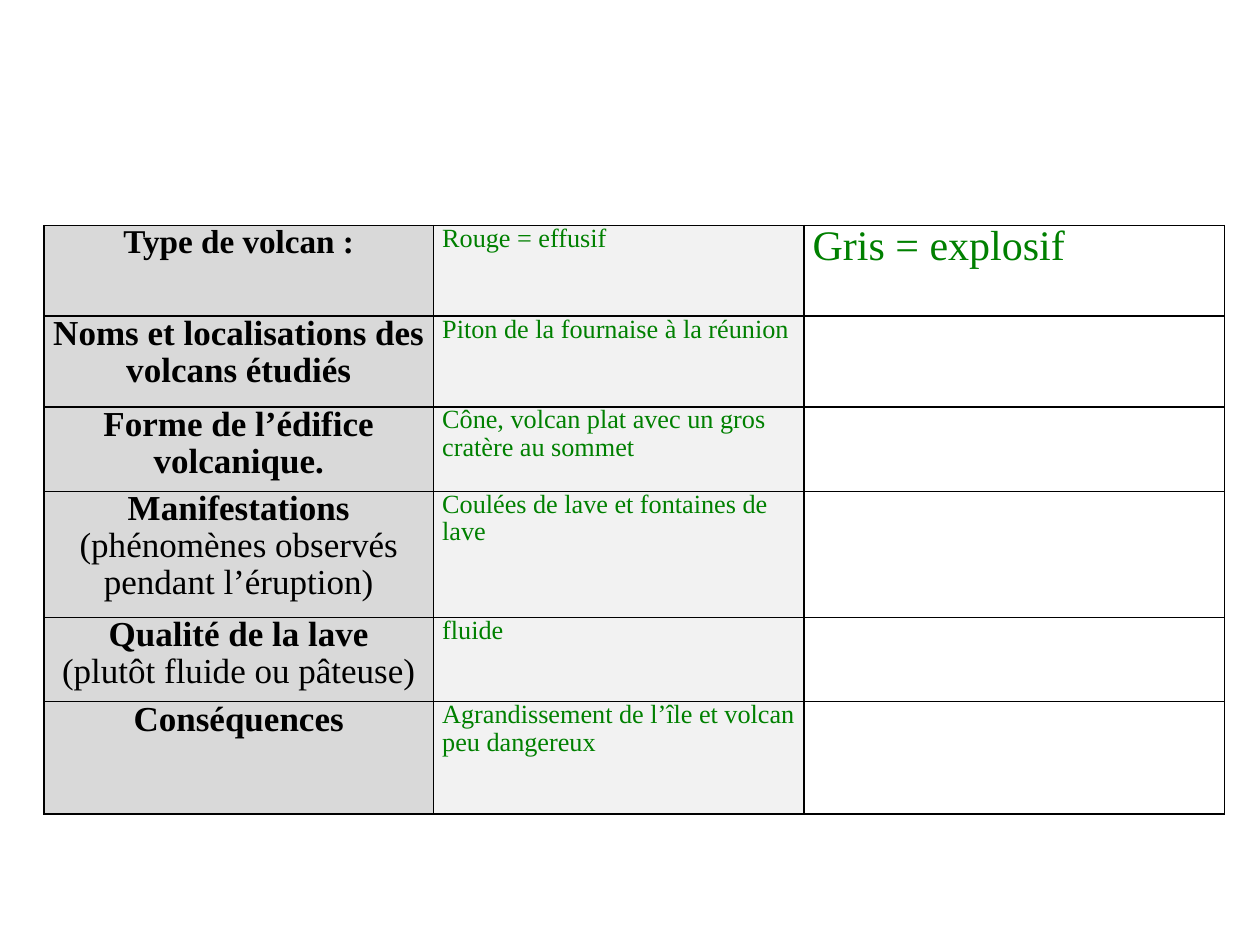
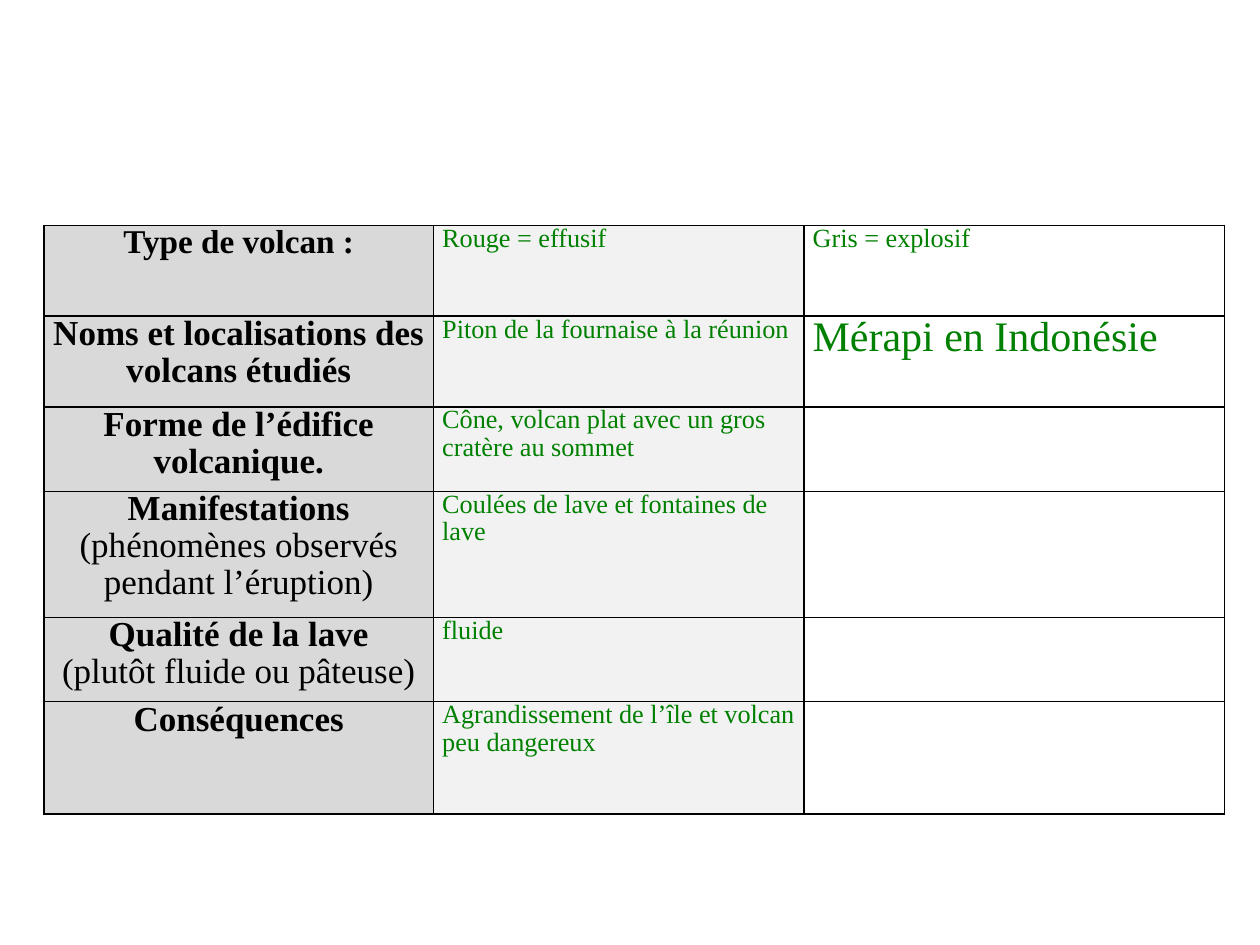
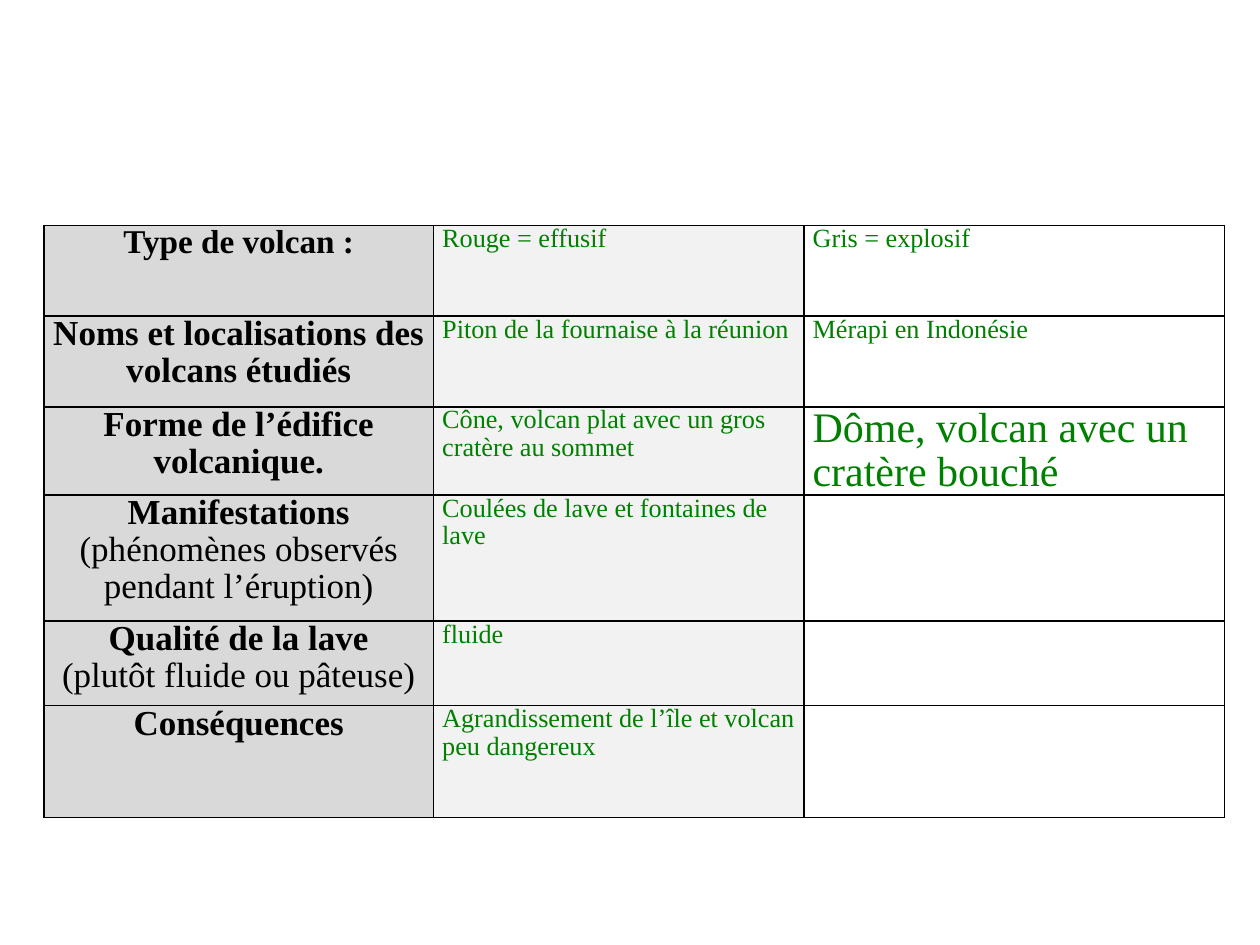
from lxml.etree import SubElement
from pptx import Presentation
from pptx.dml.color import RGBColor
from pptx.enum.text import PP_ALIGN
from pptx.oxml.ns import qn
from pptx.util import Inches, Pt

FONT = "Times New Roman"
BLACK = RGBColor(0x00, 0x00, 0x00)
GREEN = RGBColor(0x00, 0x80, 0x00)
LABEL_GREY = RGBColor(0xD9, 0xD9, 0xD9)
EFFUSIVE_GREY = RGBColor(0xF2, 0xF2, 0xF2)

COLUMN_WIDTHS = [3.09, 2.94, 3.34]
ROW_HEIGHTS = [0.72, 0.72, 0.67, 1, 0.67, 0.89]

# Each label is a list of paragraphs, each paragraph a list of (text, bold)
LABELS = [
    [[("Type de volcan\u00a0:", True)]],
    [[("Noms et localisations des volcans étudiés", True)]],
    [[("Forme de l’édifice volcanique.", True)]],
    [[("Manifestations ", True), ("(phénomènes observés pendant l’éruption)", False)]],
    [[("Qualité de la lave", True)], [("(plutôt fluide ou pâteuse)", False)]],
    [[("Conséquences", True)]],
]
EFFUSIVE = [
    "Rouge = effusif",
    "Piton de la fournaise à la réunion",
    "Cône, volcan plat avec un gros cratère au sommet",
    "Coulées de lave et fontaines de lave",
    "fluide",
    "Agrandissement de l’île et volcan peu dangereux",
]
EXPLOSIVE = [
    "Gris = explosif",
    "Mérapi en Indonésie",
    "Dôme, volcan avec un cratère bouché",
]


def frame_cell(cell):
    cell.margin_left = cell.margin_right = Inches(0.07)
    cell.margin_top = cell.margin_bottom = 0
    properties = cell._tc.get_or_add_tcPr()
    for side in ("a:lnL", "a:lnR", "a:lnT", "a:lnB"):
        border = SubElement(properties, qn(side), w=str(Pt(1)))
        fill = SubElement(border, qn("a:solidFill"))
        SubElement(fill, qn("a:srgbClr"), val=str(BLACK))


def write_paragraph(paragraph, runs, size, color, align):
    paragraph.alignment = align
    paragraph.line_spacing = 0.95
    paragraph.font.name = FONT
    paragraph.font.size = Pt(size)
    paragraph.font.color.rgb = color
    for text, bold in runs:
        run = paragraph.add_run()
        run.text = text
        run.font.bold = bold


prs = Presentation()
prs.slide_width, prs.slide_height = Inches(10), Inches(7.5)

# Every slide reveals one more answer about explosive volcanoes
for newest in range(len(EXPLOSIVE)):
    slide = prs.slides.add_slide(prs.slide_layouts[6])
    comparison = slide.shapes.add_table(
        len(ROW_HEIGHTS), len(COLUMN_WIDTHS), Inches(0.35), Inches(1.79),
        Inches(sum(COLUMN_WIDTHS)), Inches(sum(ROW_HEIGHTS))).table
    comparison.first_row = comparison.horz_banding = False
    for column, width in zip(comparison.columns, COLUMN_WIDTHS):
        column.width = Inches(width)
    for row, height in zip(comparison.rows, ROW_HEIGHTS):
        row.height = Inches(height)

    for index, (label, effusive) in enumerate(zip(LABELS, EFFUSIVE)):
        label_cell, effusive_cell, explosive_cell = comparison.rows[index].cells
        for cell in (label_cell, effusive_cell, explosive_cell):
            frame_cell(cell)

        # Criterion
        label_cell.fill.solid()
        label_cell.fill.fore_color.rgb = LABEL_GREY
        for number, runs in enumerate(label):
            frame = label_cell.text_frame
            paragraph = frame.add_paragraph() if number else frame.paragraphs[0]
            write_paragraph(paragraph, runs, 20 if index else 19, BLACK, PP_ALIGN.CENTER)

        # Effusive volcano
        effusive_cell.fill.solid()
        effusive_cell.fill.fore_color.rgb = EFFUSIVE_GREY
        write_paragraph(effusive_cell.text_frame.paragraphs[0], [(effusive, False)],
                        15, GREEN, PP_ALIGN.LEFT)

        # Explosive volcano, newest answer enlarged
        explosive_cell.fill.background()
        if index <= newest:
            write_paragraph(explosive_cell.text_frame.paragraphs[0],
                            [(EXPLOSIVE[index], False)],
                            24 if index == newest else 15, GREEN, PP_ALIGN.LEFT)

prs.save("out.pptx")
